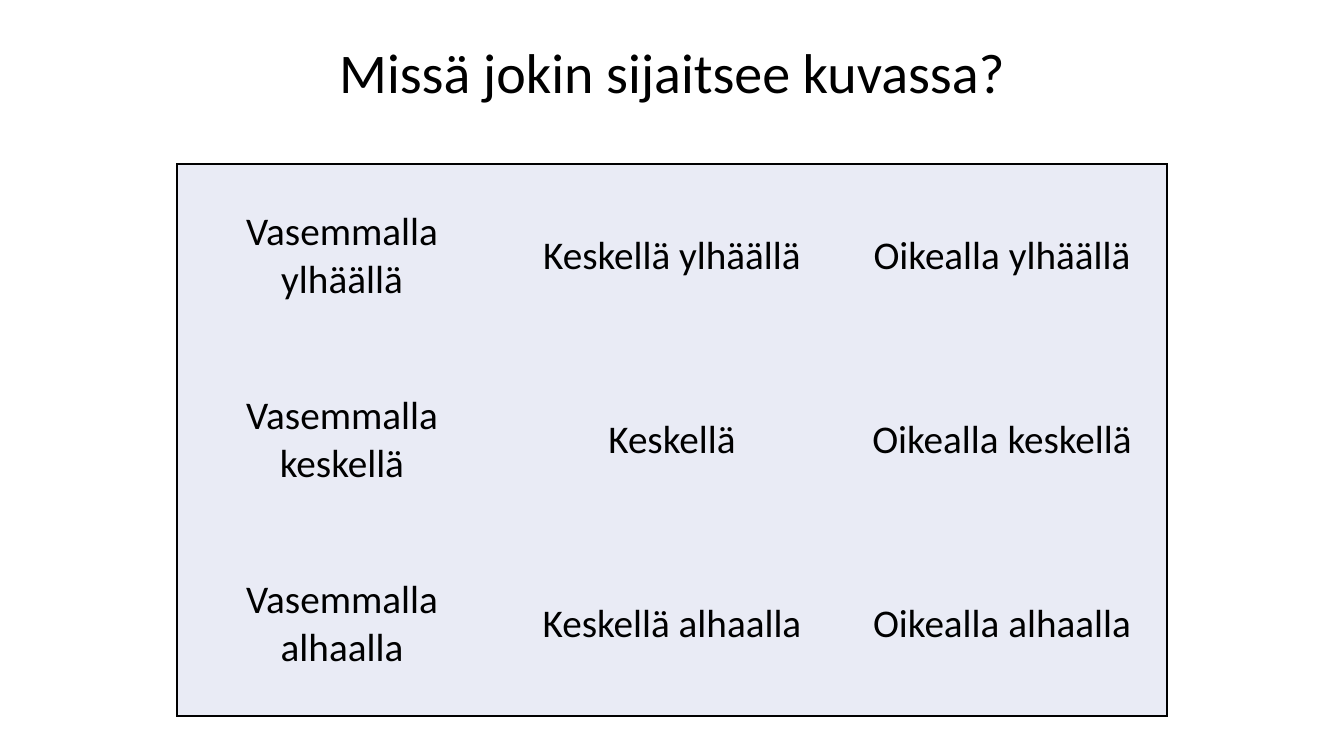
"""Build a slide with a three by three grid of Finnish words for places in a picture."""
from lxml import etree
from pptx import Presentation
from pptx.dml.color import RGBColor
from pptx.enum.text import MSO_ANCHOR, PP_ALIGN
from pptx.oxml.ns import qn
from pptx.util import Pt

TITLE = "Missä jokin sijaitsee kuvassa?"
WORDS = [
    ["Vasemmalla ylhäällä", "Keskellä ylhäällä", "Oikealla ylhäällä"],
    ["Vasemmalla keskellä", "Keskellä", "Oikealla keskellä"],
    ["Vasemmalla alhaalla", "Keskellä alhaalla", "Oikealla alhaalla"],
]
FONT, INK, TINT = "Calibri", "000000", "E9EBF5"
LEFT, TOP, WIDE, HIGH = 177, 164, 330, 184
CENTER, TOP_EDGE, MIDDLE = PP_ALIGN.CENTER, MSO_ANCHOR.TOP, MSO_ANCHOR.MIDDLE


def px(n):
    return round(n * 914400 / 100.8)


def color(code):
    return RGBColor.from_string(code)


def write(frame, text, size):
    frame.text = text
    para = frame.paragraphs[0]
    para.alignment = CENTER
    para.font.name = FONT
    para.font.size = Pt(size)
    para.font.color.rgb = color(INK)
    return para


def border(cell, sides):
    props = cell._tc.get_or_add_tcPr()
    for spot, (side, drawn) in enumerate(sides.items()):
        line = etree.Element(qn("a:ln" + side), w=str(Pt(1)))
        if drawn:
            fill = etree.SubElement(line, qn("a:solidFill"))
            etree.SubElement(fill, qn("a:srgbClr"), val=INK)
        else:
            etree.SubElement(line, qn("a:noFill"))
        props.insert(spot, line)


def main():
    deck = Presentation()
    deck.slide_width, deck.slide_height = px(1344), px(756)
    slide = deck.slides.add_slide(deck.slide_layouts[5])

    title = slide.shapes.title
    title.left, title.top, title.width, title.height = map(px, (92, 40, 1160, 146))
    title.text_frame.vertical_anchor = TOP_EDGE
    write(title.text_frame, TITLE, 40).line_spacing = 0.9

    rows, cols = len(WORDS), len(WORDS[0])
    box = map(px, (LEFT, TOP, cols * WIDE, rows * HIGH))
    table = slide.shapes.add_table(rows, cols, *box).table
    table.first_row = table.horz_banding = False
    for r, line in enumerate(WORDS):
        for c, text in enumerate(line):
            cell = table.cell(r, c)
            cell.vertical_anchor = MIDDLE
            cell.fill.solid()
            cell.fill.fore_color.rgb = color(TINT)
            write(cell.text_frame, text, 28)
            border(cell, {"L": c == 0, "R": c == cols - 1,
                          "T": r == 0, "B": r == rows - 1})
    deck.save("out.pptx")


if __name__ == "__main__":
    main()
